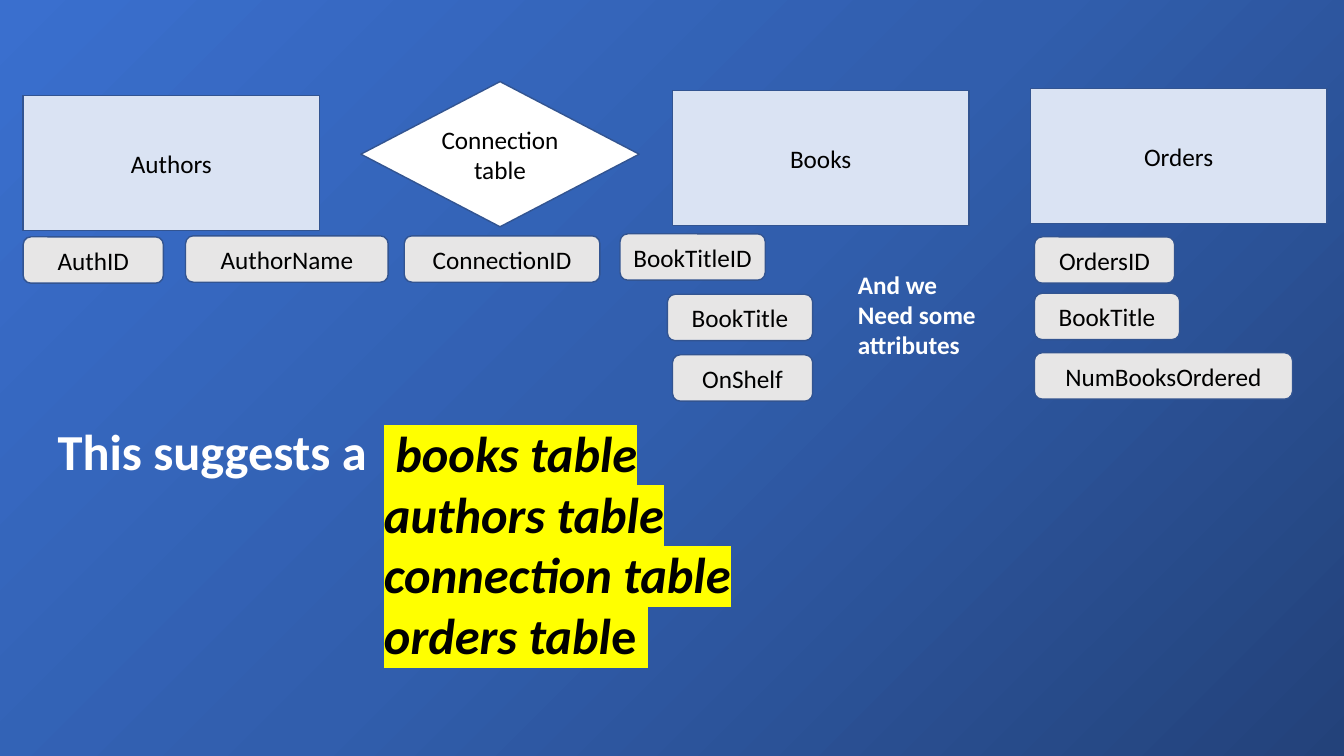
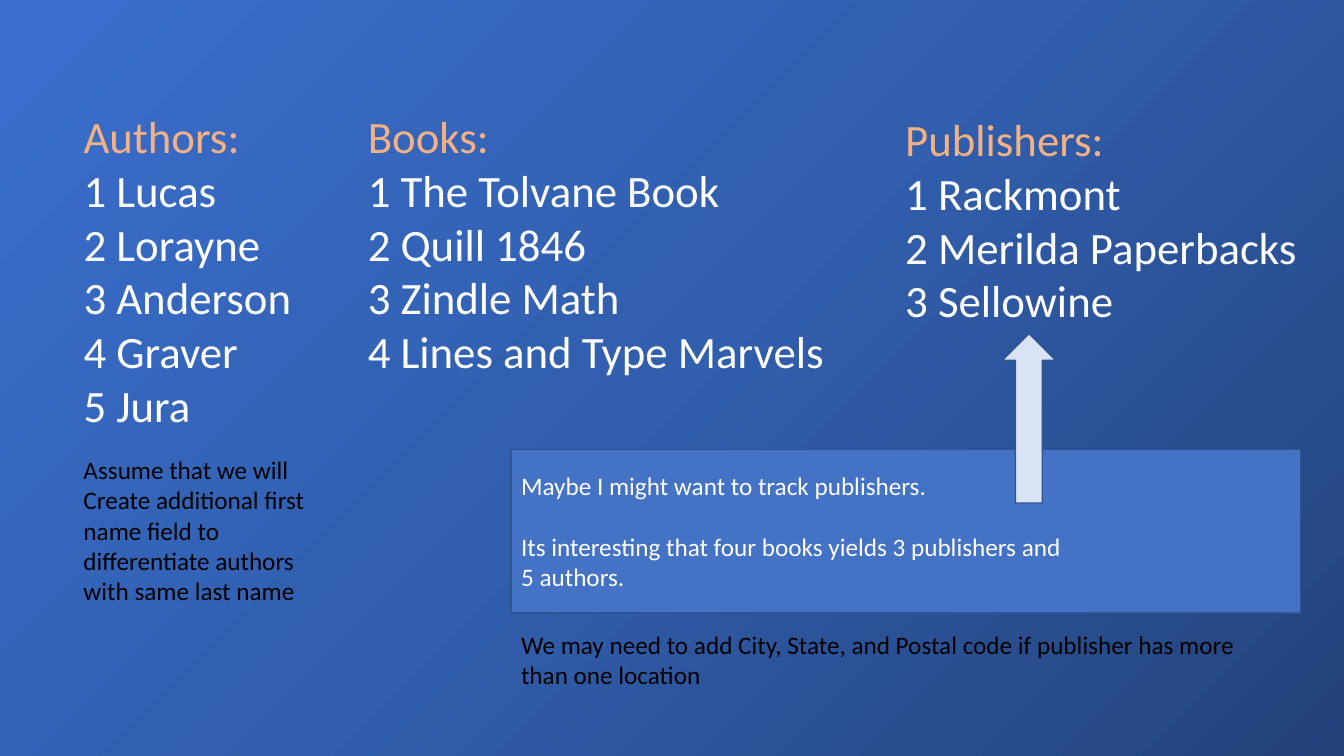
from copy import deepcopy

from pptx import Presentation
from pptx.dml.color import RGBColor
from pptx.enum.shapes import MSO_SHAPE
from pptx.enum.text import MSO_ANCHOR, MSO_AUTO_SIZE, PP_ALIGN
from pptx.oxml import parse_xml
from pptx.oxml.ns import nsdecls, qn
from pptx.util import Inches, Pt

RECT, ROUND = MSO_SHAPE.RECTANGLE, MSO_SHAPE.ROUNDED_RECTANGLE
DIAMOND, ARROW = MSO_SHAPE.FLOWCHART_DECISION, MSO_SHAPE.UP_ARROW
LEFT, CENTER, RIGHT = PP_ALIGN.LEFT, PP_ALIGN.CENTER, PP_ALIGN.RIGHT
MIDDLE, GROW = MSO_ANCHOR.MIDDLE, MSO_AUTO_SIZE.SHAPE_TO_FIT_TEXT

FONT = "Calibri"
BLACK, WHITE, PEACH, YELLOW = "000000", "FFFFFF", "F4B183", "FFFF00"
PALE, GREY, BLUE, EDGE = "DAE3F3", "E7E6E6", "4472C4", "325491"
BACK = [(0, "23427A"), (0.5, "315EAD"), (1, "3A6FCE")]


def rgb(code):
    return RGBColor.from_string(code)


def mark(run, color):
    """Highlight a run; the tag must follow its solid fill."""
    tag = parse_xml(f'<a:highlight {nsdecls("a")}><a:srgbClr val="{color}"/></a:highlight>')
    run.font._element.find(qn("a:solidFill")).addnext(tag)


def write(shape, lines, size=18, color=BLACK, head=None, bold=None,
          italic=None, light=None, align=LEFT, gaps=None):
    """Write lines; a line is a string or a list of (text, italic) runs."""
    frame = shape.text_frame
    for i, line in enumerate(lines):
        para = frame.paragraphs[0] if i == 0 else frame.add_paragraph()
        para.alignment = align
        if gaps and i in gaps:
            para.space_before = Pt(gaps[i])
        runs = [(line, italic)] if isinstance(line, str) else line
        for text, slant in runs:
            run = para.add_run()
            run.text = text
            font = run.font
            font.name, font.size = FONT, Pt(size)
            font.bold, font.italic = bold, slant
            font.color.rgb = rgb(head if head and i == 0 else color)
            if light:
                mark(run, light)


def label(slide, box, lines, wrap=True, **form):
    text = slide.shapes.add_textbox(*map(Inches, box))
    text.text_frame.word_wrap = wrap
    text.text_frame.auto_size = GROW
    write(text, lines, **form)


def block(slide, kind, box, fill, lines=(), **form):
    shape = slide.shapes.add_shape(kind, *map(Inches, box))
    shape.shadow.inherit = False
    shape.fill.solid()
    shape.fill.fore_color.rgb = rgb(fill)
    shape.line.color.rgb = rgb(EDGE)
    shape.line.width = Pt(1)
    shape.text_frame.word_wrap = True
    shape.text_frame.vertical_anchor = MIDDLE
    write(shape, lines, **form)


def paint(master):
    """Give all slides the diagonal gradient."""
    fill = master.background.fill
    fill.gradient()
    stops = master.element.find(".//" + qn("a:gsLst"))
    stops.append(deepcopy(stops[0]))
    for stop, (place, color) in zip(fill.gradient_stops, BACK):
        stop.position = place
        stop.color.rgb = rgb(color)
    fill.gradient_angle = 135


def entity(slide, box, name, fields, kind=RECT, fill=PALE):
    """A table box with its field cards, placed from the box's corner."""
    block(slide, kind, box, fill, [name], align=CENTER)
    for dx, dy, width, field in fields:
        card = (box[0] + dx, box[1] + dy, width, 0.46)
        block(slide, ROUND, card, GREY, [field], align=CENTER)


def schema(slide):
    # Tables and their fields
    entity(slide, (0.23, 0.95, 2.94, 1.34), "Authors",
           [(0, 1.4, 1.39, "AuthID"), (1.61, 1.39, 2.01, "AuthorName")])
    entity(slide, (3.58, 0.81, 2.76, 1.44), "Connection table",
           [(0.43, 1.53, 1.94, "ConnectionID")], DIAMOND, WHITE)
    entity(slide, (6.67, 0.9, 2.94, 1.34), "Books",
           [(-0.52, 1.42, 1.44, "BookTitleID"),
            (-0.05, 2.02, 1.44, "BookTitle"), (0, 2.62, 1.39, "OnShelf")])
    entity(slide, (10.22, 0.88, 2.94, 1.34), "Orders",
           [(0.04, 1.47, 1.39, "OrdersID"), (0.04, 2.03, 1.44, "BookTitle"),
            (0.04, 2.62, 2.56, "NumBooksOrdered")])

    # Conclusion
    label(slide, (3.71, 4.14, 8.98, 2.52),
          [" books table", "authors table", "connection table",
           [("orders tabl", True), ("e ", False)]],
          size=36, bold=True, italic=True, light=YELLOW)
    label(slide, (0.43, 4.12, 3.31, 0.71), ["This suggests a"], wrap=False,
          size=36, color=WHITE, bold=True, align=RIGHT)
    label(slide, (8.41, 2.62, 1.44, 1.01),
          ["And we", "Need some", "attributes"], color=WHITE, bold=True)


def roster(slide, box, title, names):
    """A headed list, numbered from 1."""
    lines = [f"{title}:"] + [f"{i} {name}" for i, name in enumerate(names, 1)]
    label(slide, box, lines, wrap=False, size=32, color=WHITE, head=PEACH)


def data(slide):
    # Lists
    roster(slide, (0.73, 1.03, 2.28, 3.33), "Authors",
           ["Lucas", "Lorayne", "Anderson", "Graver", "Jura"])
    roster(slide, (3.55, 1.03, 4.74, 2.79), "Books",
           ["The Tolvane Book", "Quill 1846", "Zindle Math",
            "Lines and Type Marvels"])
    roster(slide, (8.88, 1.06, 4.09, 2.26), "Publishers",
           ["Rackmont", "Merilda Paperbacks", "Sellowine"])

    # Publisher remark and arrow
    block(slide, RECT, (5.07, 4.46, 7.83, 1.62), BLUE,
          ["Maybe I might want to track publishers.",
           "Its interesting that four books yields 3 publishers and",
           "5 authors."], color=WHITE, gaps={1: 22})
    block(slide, ARROW, (9.94, 3.31, 0.53, 1.68), PALE)

    # Notes on fields
    label(slide, (0.73, 4.46, 2.57, 1.62),
          ["Assume that we will",
           "Create additional first name field to differentiate authors "
           "with same last name"])
    label(slide, (5.07, 6.19, 7.53, 0.71),
          ["We may need to add City, State, and Postal code if publisher "
           "has more than one location"])


def main():
    deck = Presentation()
    deck.slide_width, deck.slide_height = Inches(13.33), Inches(7.5)
    paint(deck.slide_master)
    for build in (schema, data):
        build(deck.slides.add_slide(deck.slide_layouts[6]))
    deck.save("out.pptx")


if __name__ == "__main__":
    main()
